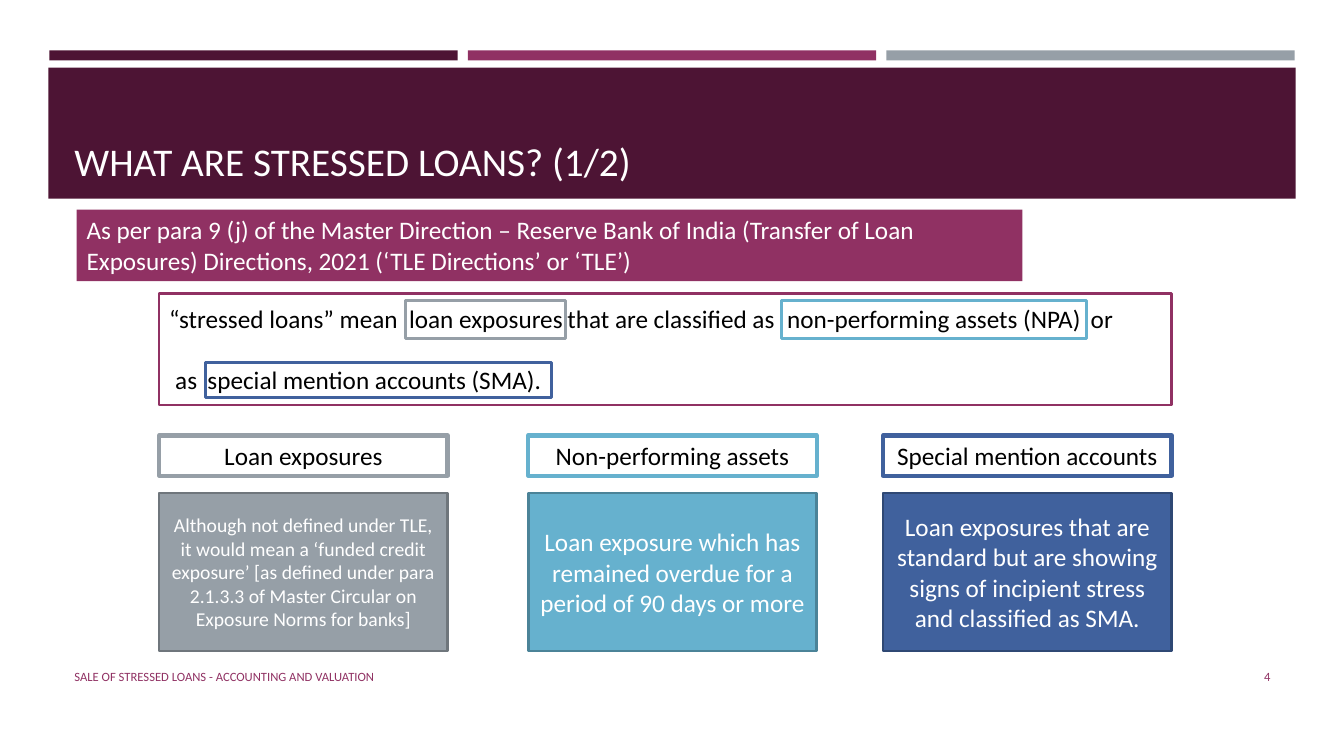
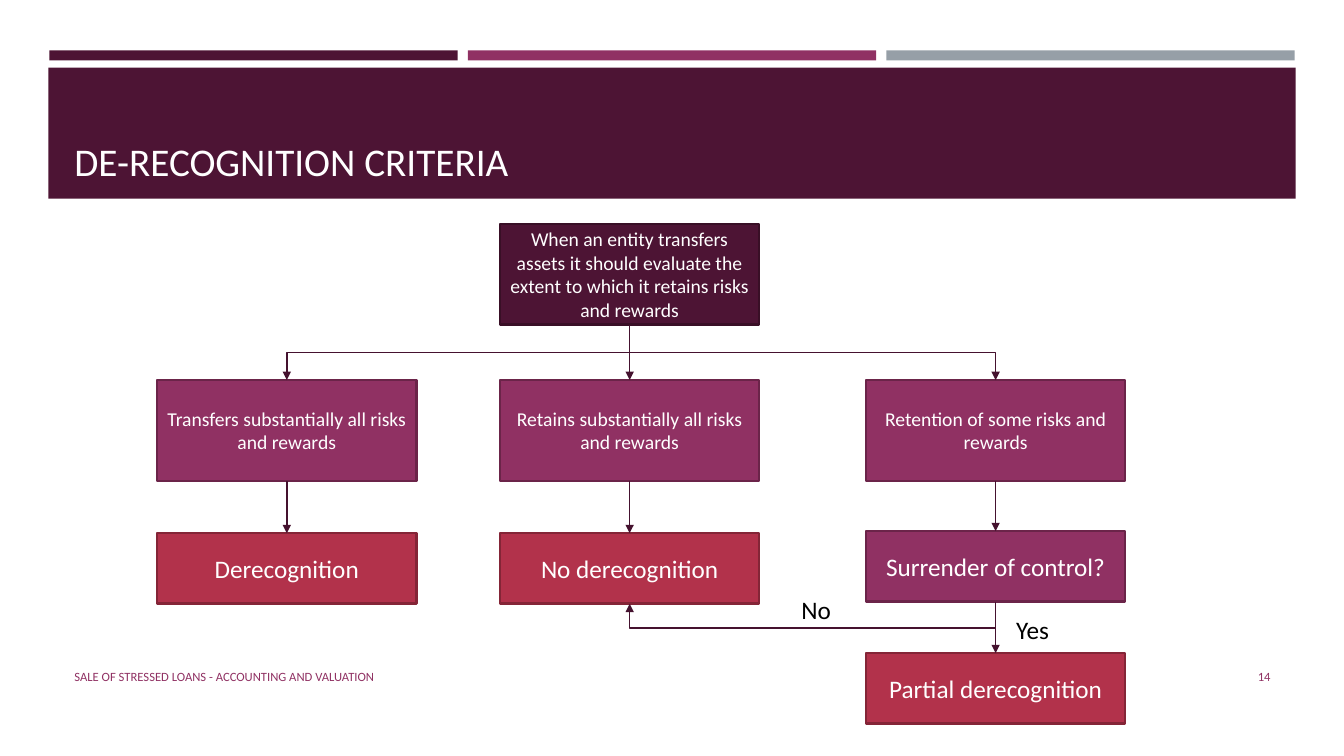
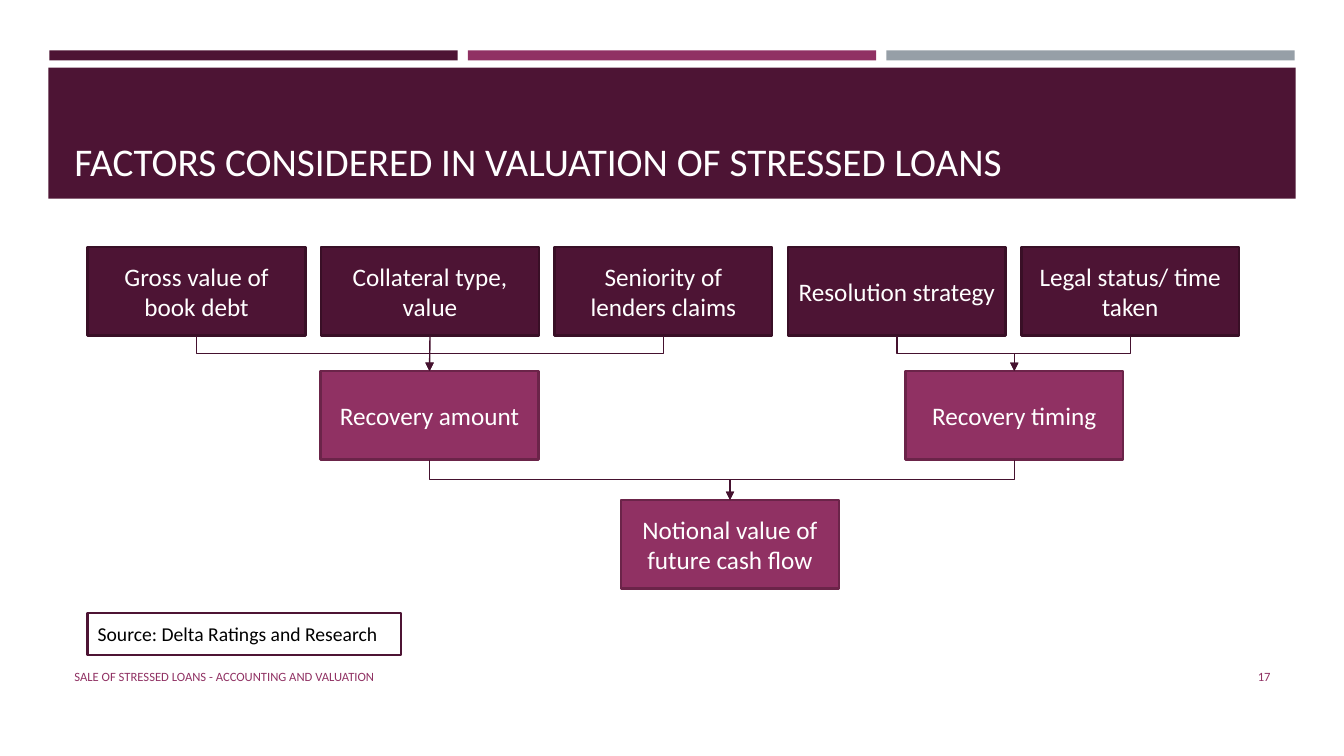
"""Build three slides on the sale of stressed loans."""
import lxml.etree as etree
import pptx
import pptx.dml.color
import pptx.enum.shapes
import pptx.enum.text
import pptx.oxml.ns
import pptx.util

Inches = pptx.util.Inches
Pt = pptx.util.Pt
qn = pptx.oxml.ns.qn
ALIGN = pptx.enum.text.PP_ALIGN
ANCHOR = pptx.enum.text.MSO_ANCHOR
RECT = pptx.enum.shapes.MSO_SHAPE.RECTANGLE
LINK = pptx.enum.shapes.MSO_CONNECTOR

FONT = "Calibri"
HEX = {
    "plum": "4D1434", "plum edge": "390F26",
    "berry": "903163", "berry edge": "6B2449",
    "red": "B2324B", "red edge": "842537",
    "gray": "969FA7", "gray edge": "6F767C",
    "sky": "66B1CE", "sky edge": "4B8398",
    "blue": "40619D", "blue edge": "2F4874",
    "wire": "45122F", "white": "FFFFFF", "black": "000000",
}
FOOTER = "SALE OF STRESSED LOANS - ACCOUNTING AND VALUATION"
BANDS = ["plum", "berry", "gray"]

BASIS = ("As per para 9 (j) of the Master Direction – Reserve Bank of India "
         "(Transfer of Loan Exposures) Directions, 2021 (‘TLE Directions’ or ‘TLE’)")
QUOTE = [
    ("“stressed loans” mean\tloan exposures\tthat are classified as\t"
     "non-performing assets (NPA)\tor", [2.38, 3.95, 6.13, 9.14]),
    ("\tas\tspecial mention accounts (SMA).", [0.06, 0.38]),
]
MARKS = [
    ((4.02, 2.98, 1.59, 0.38), "gray"),
    ((7.75, 2.98, 3.03, 0.38), "sky"),
    ((2.04, 3.6, 3.43, 0.34), "blue"),
]
TERMS = [
    (1.58, "gray", "Loan exposures", 14,
     "Although not defined under TLE, it would mean a ‘funded credit exposure’ "
     "[as defined under para 2.1.3.3 of Master Circular on Exposure Norms for banks]"),
    (5.24, "sky", "Non-performing assets", 18,
     "Loan exposure which has remained overdue for a period of 90 days or more"),
    (8.76, "blue", "Special mention accounts", 18,
     "Loan exposures that are standard but are showing signs of incipient stress "
     "and classified as SMA."),
]

COLS = [1.56, 4.96, 8.59]
TESTS = {
    "start": (1, 2.22, 1, "plum", 14, "When an entity transfers assets it should "
              "evaluate the extent to which it retains risks and rewards"),
    "moved": (0, 3.77, 1, "berry", 14, "Transfers substantially all risks and rewards"),
    "kept": (1, 3.77, 1, "berry", 14, "Retains substantially all risks and rewards"),
    "some": (2, 3.77, 1, "berry", 14, "Retention of some risks and rewards"),
    "off": (0, 5.29, 0.7, "red", 18, "Derecognition"),
    "on": (1, 5.29, 0.7, "red", 18, "No derecognition"),
    "control": (2, 5.27, 0.7, "berry", 18, "Surrender of control?"),
    "part": (2, 6.48, 0.7, "red", 18, "Partial derecognition"),
}
STEPS = [("start", "kept"), ("start", "moved"), ("start", "some"), ("moved", "off"),
         ("kept", "on"), ("some", "control"), ("control", "part")]
ANSWERS = [(9.98, 6.05, "Yes"), (7.85, 5.85, "No")]

INPUTS = ["Gross value of book debt", "Collateral type, value",
          "Seniority of lenders claims", "Resolution strategy",
          "Legal status/ time taken"]
RESULTS = [
    (3.18, 3.68, "Recovery amount", [0, 1, 2]),
    (8.98, 3.68, "Recovery timing", [3, 4]),
    (6.16, 4.96, "Notional value of future cash flow", [5, 6]),
]
SOURCE = "Source: Delta Ratings and Research"


def tint(name):
    return pptx.dml.color.RGBColor.from_string(HEX[name])


def write(shape, texts, size, color, align=ALIGN.LEFT, anchor=ANCHOR.MIDDLE, wrap=True):
    frame = shape.text_frame
    frame.word_wrap = wrap
    frame.vertical_anchor = anchor
    frame.text = "\n".join(texts)
    for para in frame.paragraphs:
        para.alignment = align
        for run in para.runs:
            run.font.name = FONT
            run.font.size = Pt(size)
            run.font.color.rgb = tint(color)


def label(slide, at, text, size, color, **style):
    box = slide.shapes.add_textbox(*map(Inches, at))
    write(box, [text], size, color, **style)


def block(slide, at, fill=None, edge=None, width=1.75):
    shape = slide.shapes.add_shape(RECT, *map(Inches, at))
    shape.shadow.inherit = False
    if fill:
        shape.fill.solid()
        shape.fill.fore_color.rgb = tint(fill)
    else:
        shape.fill.background()
    if edge:
        shape.line.color.rgb = tint(edge)
        shape.line.width = Pt(width)
    else:
        shape.line.fill.background()
    return shape


def node(slide, at, fill, text, size=18):
    shape = block(slide, at, fill, fill + " edge")
    write(shape, [text], size, "white", ALIGN.CENTER)
    return shape


def bend(wire, drop):
    x1, y1, x2, y2 = wire.begin_x, wire.begin_y, wire.end_x, wire.end_y
    high, wide = y2 - y1, abs(x2 - x1)
    frame = wire.element.spPr.find(qn("a:xfrm"))
    for key in ("flipH", "flipV"):
        frame.attrib.pop(key, None)
    wire.left, wire.top = (x1 + x2 - high) // 2, (y1 + y2 - wide) // 2
    wire.width, wire.height = high, wide
    if x2 > x1:
        frame.set("rot", "16200000")
        frame.set("flipH", "1")
    else:
        frame.set("rot", "5400000")
    if drop:
        geom = wire.element.spPr.find(qn("a:prstGeom"))
        guides = geom.find(qn("a:avLst"))
        if guides is None:
            guides = etree.SubElement(geom, qn("a:avLst"))
        ratio = round(Inches(drop) / high * 100000)
        etree.SubElement(guides, qn("a:gd"), name="adj1", fmla=f"val {ratio}")


def join(slide, start, end, side=0, drop=None):
    shift = abs(start.left + start.width // 2 - end.left - end.width // 2)
    bent = shift > Inches(0.05)
    wire = slide.shapes.add_connector(LINK.ELBOW if bent else LINK.STRAIGHT, 0, 0, 0, 0)
    wire.begin_connect(start, 2)
    wire.end_connect(end, side)
    if bent:
        bend(wire, drop)
    wire.line.color.rgb = tint("wire")
    wire.line.width = Pt(1)
    etree.SubElement(wire.line._get_or_add_ln(), qn("a:tailEnd"), type="triangle")
    etree.SubElement(wire.element.spPr, qn("a:effectLst"))


def page(deck, title, number):
    slide = deck.slides.add_slide(deck.slide_layouts[6])
    for i, color in enumerate(BANDS):
        block(slide, (0.49 + 4.15 * i, 0.5, 4.05, 0.1), color)
    block(slide, (0.48, 0.67, 12.37, 1.3), "plum")
    label(slide, (0.64, 0.77, 12.06, 1.11), title, 28, "white", anchor=ANCHOR.BOTTOM)
    label(slide, (0.64, 6.51, 7.56, 0.4), FOOTER, 9, "berry")
    label(slide, (11.55, 6.51, 1.15, 0.4), str(number), 9, "berry", align=ALIGN.RIGHT)
    return slide


def terms(deck):
    slide = page(deck, "WHAT ARE STRESSED LOANS? (1/2)", 4)
    quote = block(slide, (1.58, 2.91, 10.04, 1.11), "white", "berry")
    write(quote, [text for text, _ in QUOTE], 18, "black")
    paras = quote.text_frame.paragraphs
    paras[1].space_before = Pt(22)
    for para, (_, stops) in zip(paras, QUOTE):
        tabs = etree.SubElement(para._p.get_or_add_pPr(), qn("a:tabLst"))
        for stop in stops:
            etree.SubElement(tabs, qn("a:tab"), pos=str(Inches(stop)), algn="l")
    basis = block(slide, (0.76, 2.08, 9.38, 0.71), "berry")
    write(basis, [BASIS], 18, "white", anchor=ANCHOR.TOP)
    for at, color in MARKS:
        block(slide, at, None, color, 2.25)
    for left, color, name, size, text in TERMS:
        head = block(slide, (left, 4.32, 2.86, 0.4), "white", color, 3)
        write(head, [name], 18, "black", ALIGN.CENTER)
        node(slide, (left, 4.89, 2.86, 1.57), color, text, size)


def tests(deck):
    slide = page(deck, "DE-RECOGNITION CRITERIA", 14)
    nodes = {key: node(slide, (COLS[col], top, 2.57, high), fill, text, size)
             for key, (col, top, high, fill, size, text) in TESTS.items()}
    for start, end in STEPS:
        join(slide, nodes[start], nodes[end])
    join(slide, nodes["control"], nodes["on"], side=2, drop=0.26)
    for left, top, text in ANSWERS:
        label(slide, (left, top, 0.54, 0.4), text, 18, "black",
              anchor=ANCHOR.TOP, wrap=False)


def factors(deck):
    slide = page(deck, "FACTORS CONSIDERED IN VALUATION OF STRESSED LOANS", 17)
    size = (2.16, 0.88)
    pitch = (10.13 - 0.87) / (len(INPUTS) - 1)
    nodes = [node(slide, (0.87 + pitch * i, 2.45, *size), "plum", text)
             for i, text in enumerate(INPUTS)]
    for left, top, text, feeds in RESULTS:
        nodes.append(node(slide, (left, top, *size), "berry", text))
        for i in feeds:
            join(slide, nodes[i], nodes[-1])
    note = block(slide, (0.87, 6.08, 3.11, 0.42), "white", "plum")
    write(note, [SOURCE], 14, "black")


def main():
    deck = pptx.Presentation()
    deck.slide_width, deck.slide_height = Inches(13.33), Inches(7.5)
    for build in (terms, tests, factors):
        build(deck)
    deck.save("out.pptx")


if __name__ == "__main__":
    main()
